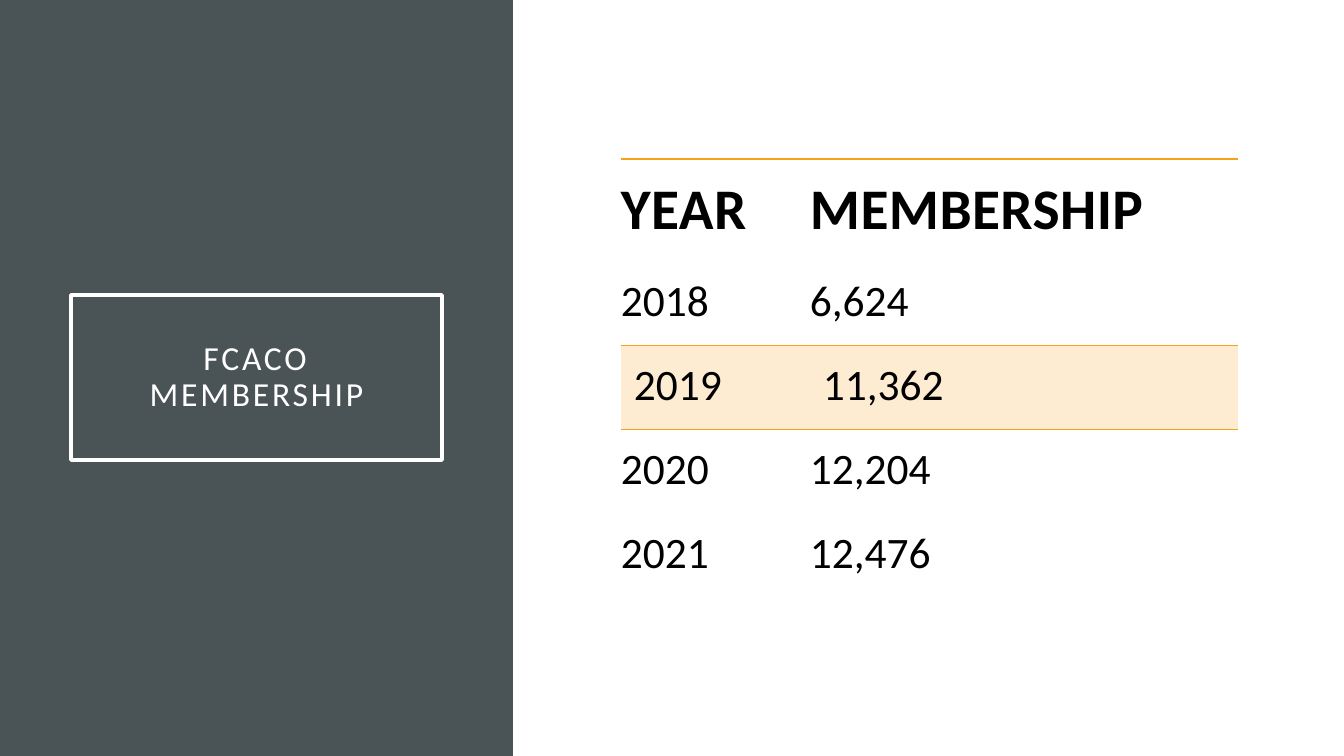
"""Build the membership slide with a title panel and a yearly table."""
from dataclasses import dataclass

from lxml.etree import SubElement
from pptx import Presentation
from pptx.dml.color import RGBColor
from pptx.enum.shapes import MSO_SHAPE as Shape
from pptx.enum.text import MSO_ANCHOR as Anchor, MSO_AUTO_SIZE as AutoSize, PP_ALIGN as Align
from pptx.oxml import parse_xml
from pptx.oxml.ns import nsdecls, qn
from pptx.util import Pt

SCALE = 914400 / 100.8
PLAIN_TABLE_STYLE = "{2D5ABB26-0587-4C30-8999-92F81FD0307C}"
TITLE_LAYOUT = 5
HIGHLIGHTED_YEAR = "2019"
HEADINGS = ("YEAR", "MEMBERSHIP")
MEMBERSHIP = (
    ("2018", "6,624"),
    ("2019", "11,362"),
    ("2020", "12,204"),
    ("2021", "12,476"),
)


@dataclass(frozen=True)
class Theme:
    font: str = "Calibri"
    panel: str = "4A5356"
    light: str = "FFFFFF"
    dark: str = "000000"
    accent: str = "F6A21D"
    highlight: str = "FDECD2"
    title_size: int = 24
    heading_size: int = 41
    value_size: int = 31


THEME = Theme()


def px(length):
    return round(length * SCALE)


def rgb(value):
    return RGBColor.from_string(value)


def place(box, left, top, width, height):
    box.left, box.top, box.width, box.height = map(px, (left, top, width, height))


def set_margins(holder, left, top, right, bottom):
    holder.margin_left, holder.margin_top = px(left), px(top)
    holder.margin_right, holder.margin_bottom = px(right), px(bottom)


def style_paragraph(para, size, color, bold=False, spacing=0.0):
    font = para.font
    font.name, font.size, font.bold = THEME.font, Pt(size), bold
    font.color.rgb = rgb(color)
    font._rPr.set("spc", str(round(spacing * 100)))


def add_panel(page):
    panel = page.shapes.add_shape(Shape.RECTANGLE, 0, 0, px(513), px(756))
    panel.shadow.inherit = False
    panel.fill.solid()
    panel.fill.fore_color.rgb = rgb(THEME.panel)
    panel.line.fill.background()
    page.shapes._spTree.insert(2, panel._element)


def set_title(page, text):
    title = page.shapes.title
    place(title, 71, 295, 371, 165)
    title.line.color.rgb = rgb(THEME.light)
    title.line.width = Pt(2.5)
    frame = title.text_frame
    frame.text = text
    frame.word_wrap = True
    frame.auto_size = AutoSize.NONE
    frame.vertical_anchor = Anchor.MIDDLE
    set_margins(frame, 60, 20, 60, 20)
    para = frame.paragraphs[0]
    para.alignment = Align.CENTER
    para.line_spacing = 0.9
    style_paragraph(para, THEME.title_size, THEME.light, spacing=2)


def set_border(cell, side, width):
    line = parse_xml(f'<a:{side} {nsdecls("a")} w="{Pt(width)}"/>')
    fill = SubElement(line, qn("a:solidFill"))
    SubElement(fill, qn("a:srgbClr"), val=THEME.accent)
    cell._tc.get_or_add_tcPr().insert(0, line)


def fill_cell(cell, text, heading, highlighted):
    cell.text = text
    cell.vertical_anchor = Anchor.MIDDLE if heading else Anchor.TOP
    set_margins(cell, 13 if highlighted else 0, 14, 3 if heading else 28, 14)
    size = THEME.heading_size if heading else THEME.value_size
    style_paragraph(cell.text_frame.paragraphs[0], size, THEME.dark, heading, 0.3 if heading else 0)
    if highlighted:
        cell.fill.solid()
        cell.fill.fore_color.rgb = rgb(THEME.highlight)
        set_border(cell, "lnT", 0.75)
    else:
        cell.fill.background()
    if heading:
        set_border(cell, "lnT", 1.5)


def add_membership_table(page):
    rows = (HEADINGS, *MEMBERSHIP)
    widths = (189, 428)
    heights = (102, *[84] * len(MEMBERSHIP))
    table = page.shapes.add_table(
        len(rows), len(widths), px(621), px(159), px(sum(widths)), px(sum(heights))
    ).table
    table._tbl.tblPr.find(qn("a:tableStyleId")).text = PLAIN_TABLE_STYLE
    table.horz_banding = False
    for column, width in zip(table.columns, widths):
        column.width = px(width)
    for row, height, texts in zip(table.rows, heights, rows):
        row.height = px(height)
        for cell, text in zip(row.cells, texts):
            fill_cell(cell, text, texts == HEADINGS, texts[0] == HIGHLIGHTED_YEAR)


def main():
    deck = Presentation()
    deck.slide_width, deck.slide_height = px(1344), px(756)
    page = deck.slides.add_slide(deck.slide_layouts[TITLE_LAYOUT])
    add_panel(page)
    set_title(page, "FCACO MEMBERSHIP")
    add_membership_table(page)
    deck.save("out.pptx")


main()
